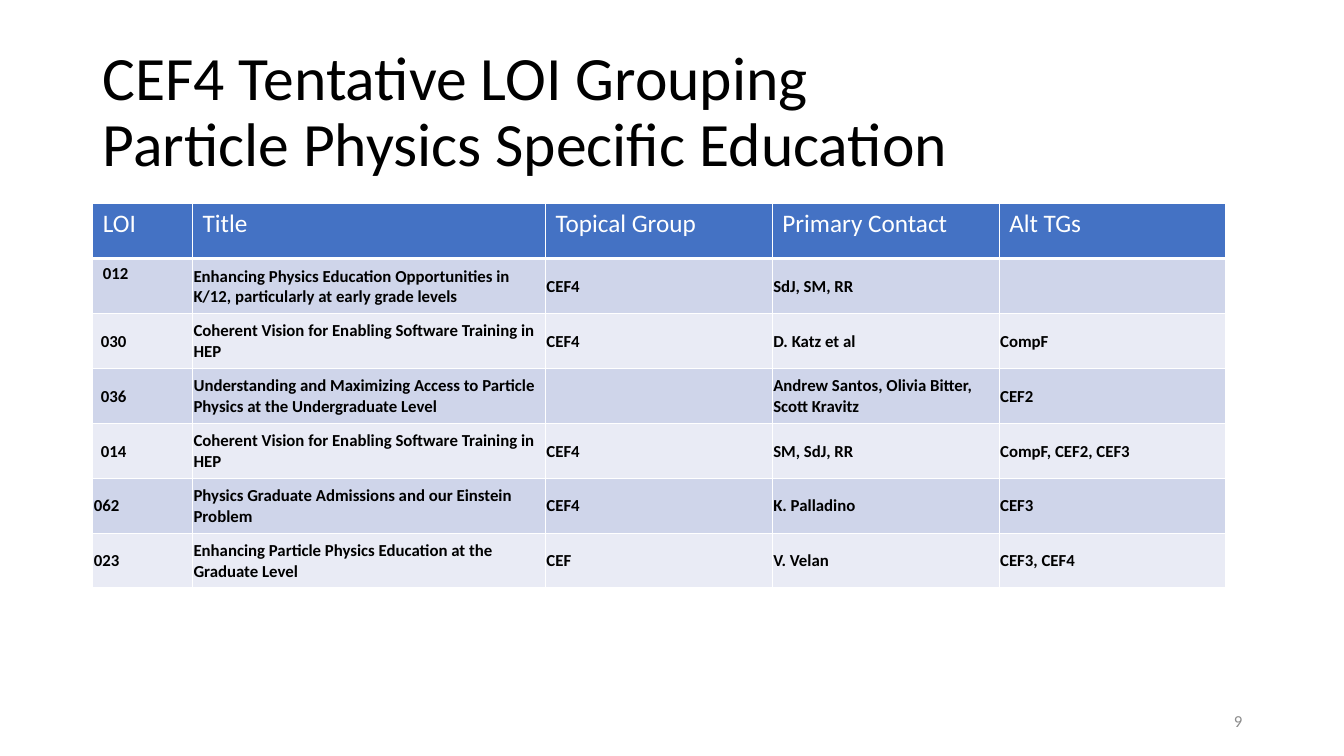
from dataclasses import dataclass

import lxml.etree
import pptx
import pptx.dml.color
import pptx.enum.text
import pptx.oxml.ns
import pptx.util

Inches = pptx.util.Inches
Pt = pptx.util.Pt
Anchor = pptx.enum.text.MSO_ANCHOR
Align = pptx.enum.text.PP_ALIGN

FONT = "Calibri"
BLACK, WHITE, GREY = "000000", "FFFFFF", "8C8C8C"
HEADER_FILL = "4472C4"
BAND_FILLS = ("CFD5EA", "E9EBF5")
COLUMN_WIDTHS = (0.99, 3.5, 2.25, 2.25, 2.25)
ROW_HEIGHT = 0.545
HEADINGS = ("LOI", "Title", "Topical Group", "Primary Contact", "Alt TGs")
TIGHT, INDENTED = 0.01, 0.08


@dataclass(frozen=True)
class Letter:
    number: str
    title: str
    group: str
    contact: str
    alternatives: str
    number_indent: float = TIGHT

    def texts(self) -> tuple[str, ...]:
        return self.number, self.title, self.group, self.contact, self.alternatives


LETTERS = (
    Letter("012", "Enhancing Physics Education Opportunities in K/12, "
           "particularly at early grade levels", "CEF4", "SdJ, SM, RR", ""),
    Letter("030", "Coherent Vision for Enabling Software Training in HEP",
           "CEF4", "D. Katz et al", "CompF", INDENTED),
    Letter("036", "Understanding and Maximizing Access to Particle Physics "
           "at the Undergraduate Level", "",
           "Andrew Santos, Olivia Bitter, Scott Kravitz", "CEF2", INDENTED),
    Letter("014", "Coherent Vision for Enabling Software Training in HEP",
           "CEF4", "SM, SdJ, RR", "CompF, CEF2, CEF3", INDENTED),
    Letter("062", "Physics Graduate Admissions and our Einstein Problem",
           "CEF4", "K. Palladino", "CEF3"),
    Letter("023", "Enhancing Particle Physics Education at the Graduate Level",
           "CEF", "V. Velan", "CEF3, CEF4"),
)


def rgb(value: str) -> pptx.dml.color.RGBColor:
    return pptx.dml.color.RGBColor.from_string(value)


def write(paragraph, text: str, size: float, color: str, bold: bool = False) -> None:
    paragraph.text = text
    for run in paragraph.runs:
        run.font.name = FONT
        run.font.size = Pt(size)
        run.font.bold = bold
        run.font.color.rgb = rgb(color)


def add_text(slide, box: tuple[float, ...], text: str, size: float, color: str):
    """Add a wrapped, vertically centred text box and return its paragraph."""
    frame = slide.shapes.add_textbox(*map(Inches, box)).text_frame
    frame.word_wrap = True
    frame.vertical_anchor = Anchor.MIDDLE
    write(frame.paragraphs[0], text, size, color)
    return frame.paragraphs[0]


def paint_cell(cell, fill: str, bottom_width: float = 1) -> None:
    """Give a cell white borders and a solid fill."""
    properties = cell._tc.get_or_add_tcPr()
    qn = pptx.oxml.ns.qn
    for side, width in (("L", 1), ("R", 1), ("T", 1), ("B", bottom_width)):
        line = lxml.etree.SubElement(properties, qn(f"a:ln{side}"), w=str(Pt(width)))
        solid = lxml.etree.SubElement(line, qn("a:solidFill"))
        lxml.etree.SubElement(solid, qn("a:srgbClr"), val=WHITE)
    cell.fill.solid()
    cell.fill.fore_color.rgb = rgb(fill)


def tighten_cell(cell, left: float) -> None:
    cell.vertical_anchor = Anchor.MIDDLE
    cell.margin_left = Inches(left)
    cell.margin_top = cell.margin_right = Inches(TIGHT)
    cell.margin_bottom = 0


def add_letters_table(slide) -> None:
    row_count = len(LETTERS) + 1
    table = slide.shapes.add_table(
        row_count, len(HEADINGS), Inches(0.92), Inches(2.02),
        Inches(sum(COLUMN_WIDTHS)), Inches(ROW_HEIGHT * row_count)).table
    for column, width in zip(table.columns, COLUMN_WIDTHS):
        column.width = Inches(width)
    for row in table.rows:
        row.height = Inches(ROW_HEIGHT)

    for cell, heading in zip(table.rows[0].cells, HEADINGS):
        paint_cell(cell, HEADER_FILL, bottom_width=3)
        write(cell.text_frame.paragraphs[0], heading, 18, WHITE)

    for index, letter in enumerate(LETTERS):
        cells = table.rows[index + 1].cells
        for column, (cell, text) in enumerate(zip(cells, letter.texts())):
            paint_cell(cell, BAND_FILLS[index % 2])
            first_number = index == 0 and column == 0
            if text and not first_number:
                tighten_cell(cell, letter.number_indent if column == 0 else TIGHT)
            write(cell.text_frame.paragraphs[0], text, 12, BLACK, bold=True)


def main() -> None:
    deck = pptx.Presentation()
    deck.slide_width, deck.slide_height = Inches(13.33), Inches(7.5)
    slide = deck.slides.add_slide(deck.slide_layouts[6])

    title = add_text(slide, (0.92, 0.4, 11.5, 1.45),
                     "CEF4 Tentative LOI Grouping\vParticle Physics Specific Education",
                     44, BLACK)
    title.line_spacing = 0.9
    add_letters_table(slide)
    page_number = add_text(slide, (9.42, 6.95, 3, 0.4), "9", 12, GREY)
    page_number.alignment = Align.RIGHT

    deck.save("out.pptx")


if __name__ == "__main__":
    main()
